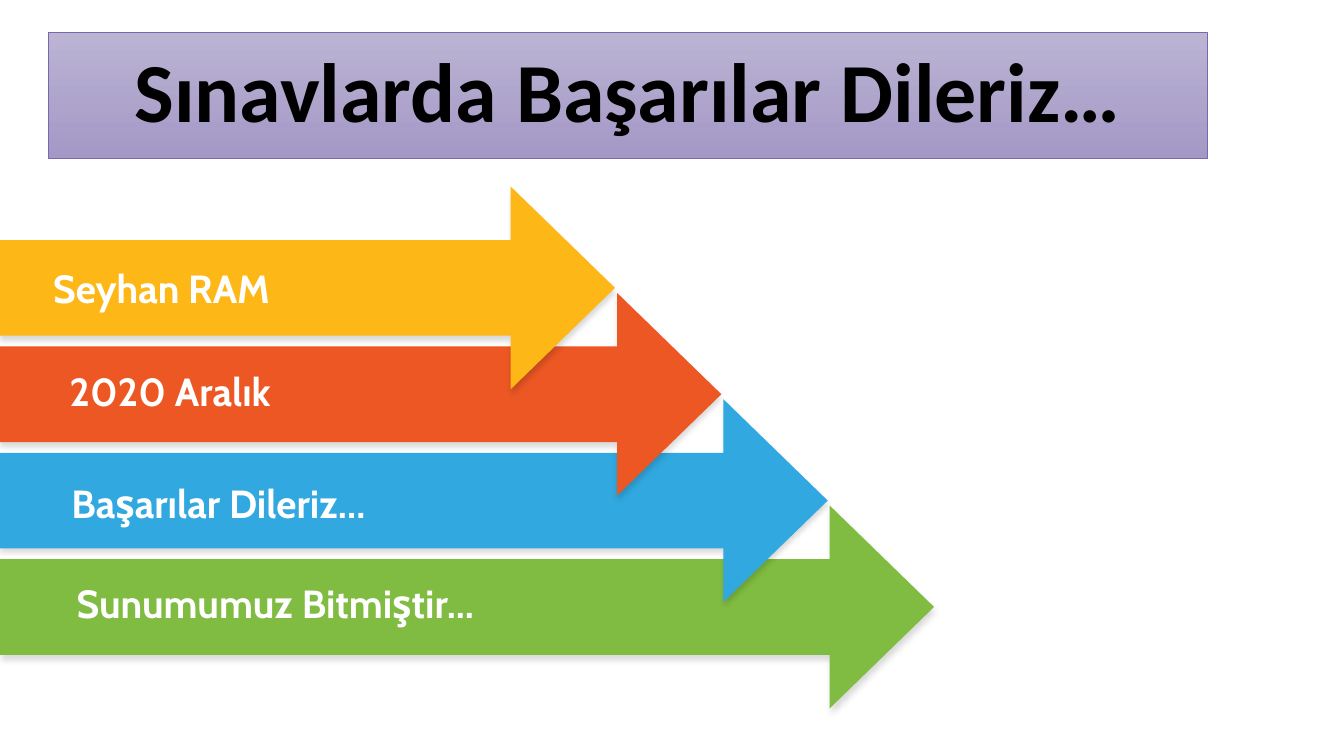
from lxml import etree
from pptx import Presentation
from pptx import util as u
from pptx.dml.color import RGBColor
from pptx.enum import shapes, text
from pptx.oxml.ns import qn

COLOURS = {
    "banner_top": "BBB4D3",
    "banner_bottom": "A498C6",
    "banner_line": "7B67AD",
    "title": "000000",
    "label": "FFFFFF",
    "shadow": "000000",
    "yellow": "FDB817",
    "orange": "EC5724",
    "blue": "31A8DF",
    "green": "7FBC41",
}

# colour, label, label left, label top, label width (cm)
ARROWS = [
    ("yellow", "Seyhan RAM", 1.09, 6.53, 11.2),
    ("orange", "2020 Aralık", 1.5, 9.12, 10.77),
    ("blue", "Başarılar Dileriz…", 1.55, 11.96, 14.58),
    ("green", "Sunumumuz Bitmiştir...", 1.68, 14.48, 15.77),
]
FIRST_TOP, FIRST_TIP, STEP = 4.7, 15.5, 2.68
HEAD_LENGTH, HEAD_HEIGHT = 2.63, 5.11
SHAFT_INSET = 1.35


def colour(name):
    return RGBColor.from_string(COLOURS[name])


def write(frame, words, font_name, size, colour_name):
    paragraph = frame.paragraphs[0]
    paragraph.text = words
    font = paragraph.font
    font.name, font.size, font.bold = font_name, u.Pt(size), True
    font.color.rgb = colour(colour_name)
    return paragraph


def add_banner(slide, words):
    banner = slide.shapes.add_shape(
        shapes.MSO_SHAPE.RECTANGLE, u.Cm(1.22), u.Cm(0.81), u.Cm(29.21), u.Cm(3.17))
    banner.shadow.inherit = False
    banner.fill.gradient()
    banner.fill.gradient_angle = 270
    for stop, name in zip(banner.fill.gradient_stops, ("banner_top", "banner_bottom")):
        stop.color.rgb = colour(name)
    banner.line.color.rgb = colour("banner_line")
    banner.line.width = u.Pt(0.5)
    banner.text_frame.vertical_anchor = text.MSO_ANCHOR.MIDDLE
    banner.text_frame.word_wrap = True
    title = write(banner.text_frame, words, "Calibri", 60, "title")
    title.alignment = text.PP_ALIGN.CENTER
    title.line_spacing = 0.9


def add_soft_shadow(shape):
    """Give the shape a faint shadow that falls straight down."""
    shape.shadow.inherit = False
    effects = shape._element.spPr.find(qn("a:effectLst"))
    shadow = etree.SubElement(
        effects, qn("a:outerShdw"), blurRad=str(u.Pt(4)), dist=str(u.Pt(3)),
        dir="5400000", algn="t", rotWithShape="0")
    tint = etree.SubElement(shadow, qn("a:srgbClr"), val=COLOURS["shadow"])
    etree.SubElement(tint, qn("a:alpha"), val="15000")


def add_arrow(slide, top, tip, colour_name):
    """Draw an arrow from the slide's left edge to the given tip."""
    neck = tip - HEAD_LENGTH
    bottom = top + HEAD_HEIGHT
    shaft_top, shaft_bottom = top + SHAFT_INSET, bottom - SHAFT_INSET
    corners = [(neck, top), (neck, shaft_top), (0, shaft_top),
               (0, shaft_bottom), (neck, shaft_bottom), (neck, bottom)]
    outline = slide.shapes.build_freeform(u.Cm(tip), u.Cm(top + HEAD_HEIGHT / 2))
    outline.add_line_segments([(u.Cm(x), u.Cm(y)) for x, y in corners])
    arrow = outline.convert_to_shape()
    arrow.fill.solid()
    arrow.fill.fore_color.rgb = colour(colour_name)
    arrow.line.fill.background()
    add_soft_shadow(arrow)


def add_label(slide, words, left, top, width):
    label = slide.shapes.add_textbox(u.Cm(left), u.Cm(top), u.Cm(width), u.Cm(1.45))
    label.text_frame.word_wrap = True
    label.text_frame.auto_size = text.MSO_AUTO_SIZE.SHAPE_TO_FIT_TEXT
    write(label.text_frame, words, "Cabin", 28, "label")


def main():
    deck = Presentation()
    deck.slide_width, deck.slide_height = u.Cm(33.87), u.Cm(19.05)
    slide = deck.slides.add_slide(deck.slide_layouts[6])
    add_banner(slide, "Sınavlarda Başarılar Dileriz…")
    # The upper arrows overlap the lower ones, so the lowest is drawn first.
    for row, (colour_name, *_) in reversed(list(enumerate(ARROWS))):
        add_arrow(slide, FIRST_TOP + row * STEP, FIRST_TIP + row * STEP, colour_name)
    for _, words, left, top, width in ARROWS:
        add_label(slide, words, left, top, width)
    deck.save("out.pptx")


if __name__ == "__main__":
    main()
